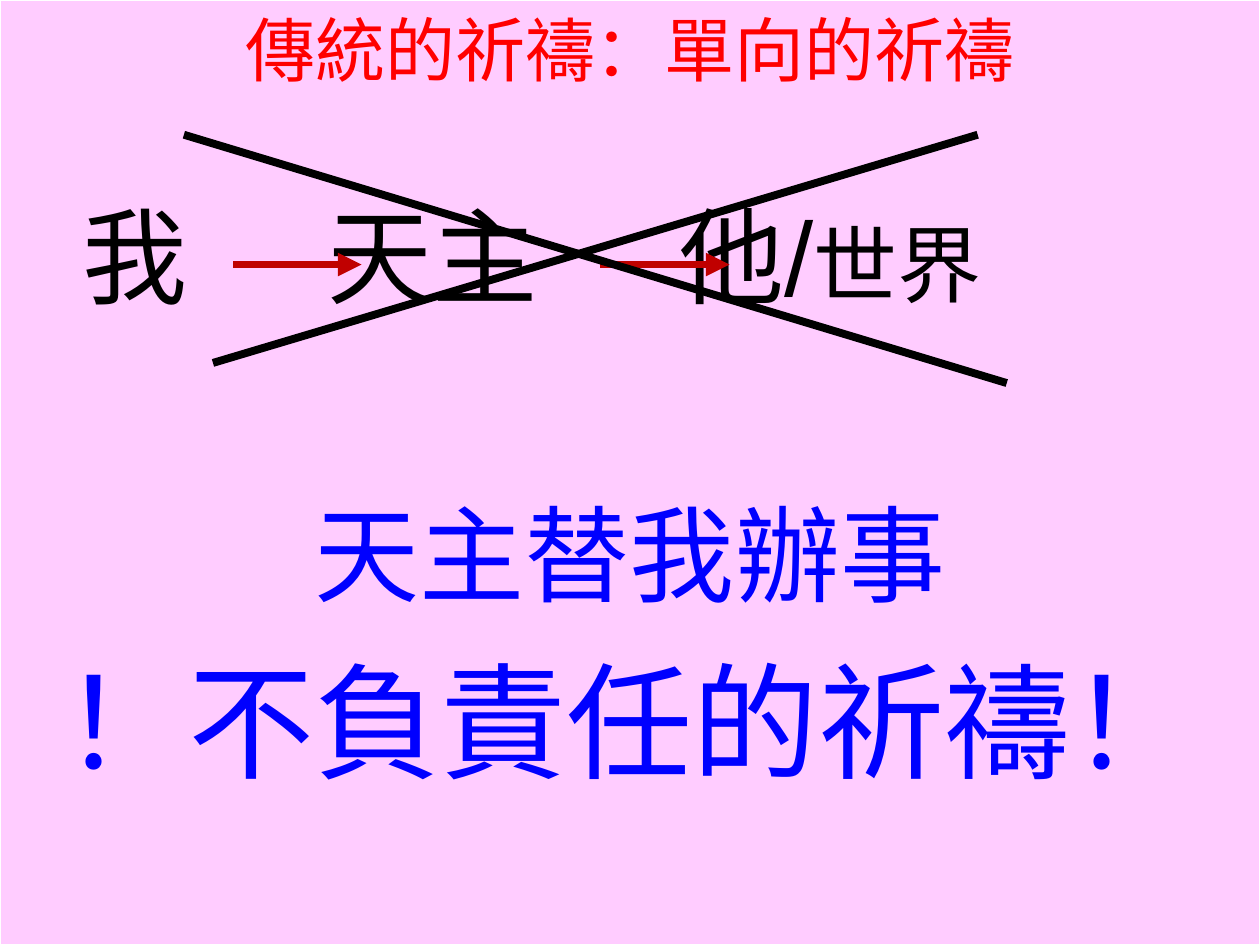
from dataclasses import dataclass

from lxml.etree import SubElement
from pptx import Presentation
from pptx.dml.color import RGBColor
from pptx.enum.shapes import MSO_CONNECTOR, MSO_SHAPE
from pptx.enum.text import MSO_ANCHOR, PP_ALIGN
from pptx.oxml.ns import qn
from pptx.oxml.xmlchemy import OxmlElement
from pptx.util import Pt

PINK = RGBColor(0xFF, 0xCC, 0xFF)
WHITE = RGBColor(0xFF, 0xFF, 0xFF)
RED = RGBColor(0xFF, 0x00, 0x00)
DARK_RED = RGBColor(0xC0, 0x00, 0x00)
BLACK = RGBColor(0x00, 0x00, 0x00)
BLUE = RGBColor(0x00, 0x00, 0xFF)

FONT = "Arial"
WIDTH, HEIGHT = 720, 540


@dataclass(frozen=True)
class Line:
    runs: tuple[tuple[str, int], ...]
    color: RGBColor
    before: float = 0
    align: PP_ALIGN = PP_ALIGN.CENTER
    tabs: tuple[float, ...] = ()


@dataclass(frozen=True)
class Stroke:
    start: tuple[float, float]
    end: tuple[float, float]
    color: RGBColor = BLACK
    arrow: bool = False


LINES = (
    Line((("傳統的祈禱：單向的祈禱", 40),), RED),
    Line((("\t我\t天主\t他/", 60), ("世界", 48)), BLACK, 58,
         PP_ALIGN.LEFT, (40, 180, 381)),
    Line((("天主替我辦事", 60),), BLUE, 98),
    Line((("！不負責任的祈禱！", 72),), BLUE, 16),
)

STROKES = (
    Stroke((133.2, 151.2), (206.6, 151.2), DARK_RED, True),
    Stroke((342.7, 151.2), (416.9, 151.2), DARK_RED, True),
    Stroke((105.1, 77), (575.3, 218.9)),
    Stroke((121.7, 207.4), (558.7, 77)),
)


def style_font(font, size: int, color: RGBColor) -> None:
    font.name = FONT
    font.size = Pt(size)
    font.color.rgb = color


def set_tabs(p, stops: tuple[float, ...]) -> None:
    tabs = OxmlElement("a:tabLst")
    for stop in stops:
        SubElement(tabs, qn("a:tab"), pos=str(Pt(stop)), algn="l")
    p._p.pPr.find(qn("a:spcBef")).addnext(tabs)


def write_line(p, line: Line) -> None:
    p.alignment = line.align
    p.space_before = Pt(line.before)
    style_font(p.font, line.runs[0][1], line.color)
    for text, size in line.runs:
        r = p.add_run()
        r.text = text
        style_font(r.font, size, line.color)
    if line.tabs:
        set_tabs(p, line.tabs)


def draw_panel(s, lines: tuple[Line, ...]) -> None:
    panel = s.shapes.add_shape(MSO_SHAPE.RECTANGLE, 0, 0, Pt(WIDTH), Pt(HEIGHT))
    panel.shadow.inherit = False
    panel.fill.solid()
    panel.fill.fore_color.rgb = PINK
    panel.line.color.rgb = WHITE
    panel.line.width = Pt(0.75)
    tf = panel.text_frame
    tf.word_wrap = True
    tf.vertical_anchor = MSO_ANCHOR.TOP
    for i, line in enumerate(lines):
        write_line(tf.add_paragraph() if i else tf.paragraphs[0], line)


def draw_stroke(s, stroke: Stroke) -> None:
    c = s.shapes.add_connector(
        MSO_CONNECTOR.STRAIGHT, *(Pt(v) for v in stroke.start + stroke.end))
    c.line.color.rgb = stroke.color
    c.line.width = Pt(4.5)
    if stroke.arrow:
        SubElement(c.line._get_or_add_ln(), qn("a:tailEnd"), type="triangle")
    SubElement(c._element.spPr, qn("a:effectLst"))


def main() -> None:
    prs = Presentation()
    prs.slide_width, prs.slide_height = Pt(WIDTH), Pt(HEIGHT)
    s = prs.slides.add_slide(prs.slide_layouts[6])
    draw_panel(s, LINES)
    for stroke in STROKES:
        draw_stroke(s, stroke)
    prs.save("out.pptx")


if __name__ == "__main__":
    main()
